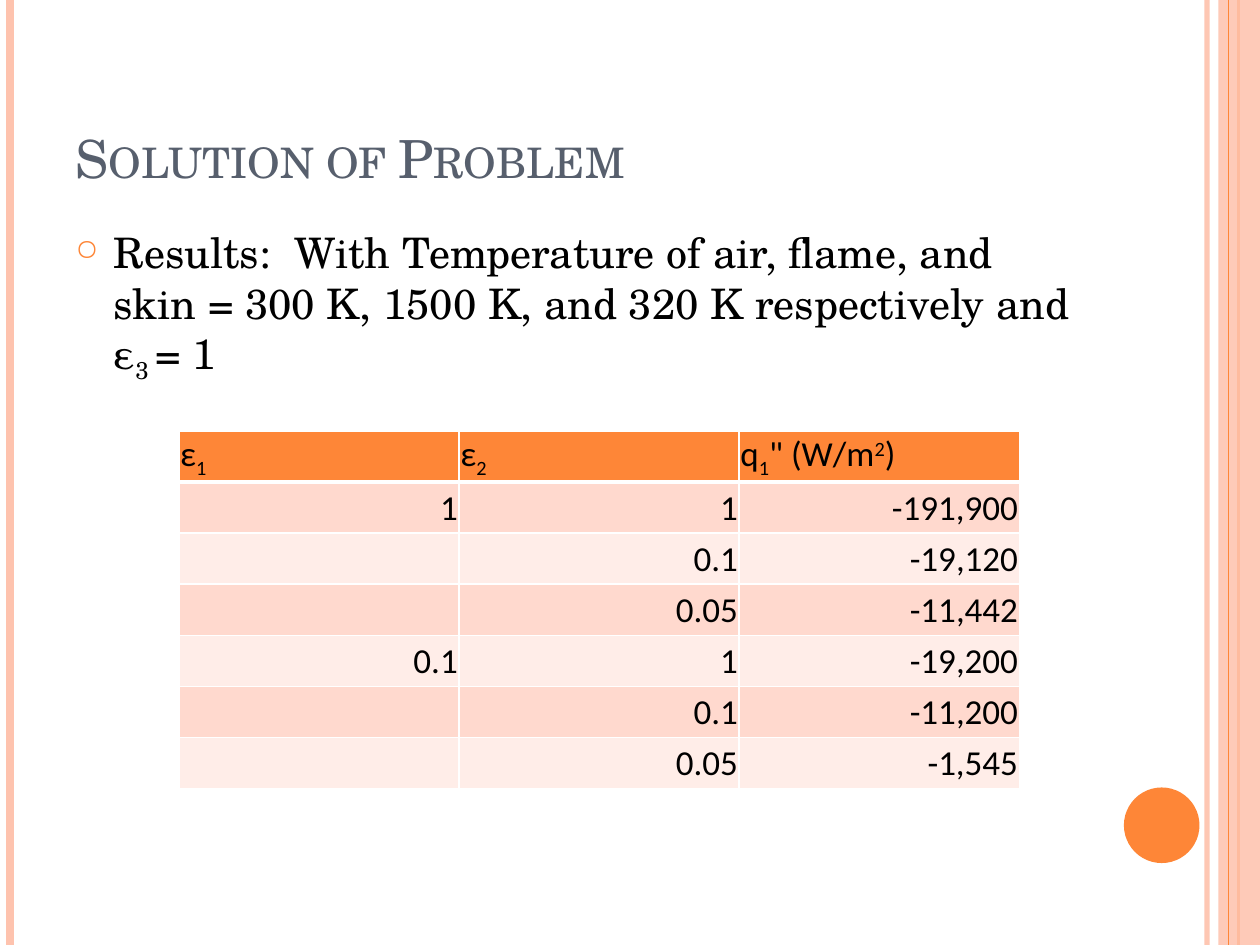
"""Build the slide showing radiative heat flux results for a flame problem."""
from typing import NamedTuple

from lxml import etree
from pptx import Presentation
from pptx import util as u
from pptx.dml.color import RGBColor
from pptx.enum import shapes, text
from pptx.oxml import ns

ORANGE, PEACH, WHITE, BLACK = "FE8637", "FEC3AE", "FFFFFF", "000000"
BANDS = "FFD9CE", "FFEDE8"
SERIF, SANS = "TeX Gyre Schola", "Calibri"


class Rule(NamedTuple):
    x: float
    color: str
    width: float
    alpha: int = 100


class Run(NamedTuple):
    text: str
    baseline: int = 0


BACK_RULES = [Rule(9.58, PEACH, 3, 93), Rule(0.08, PEACH, 4.5), Rule(9.83, ORANGE, 1.5)]
FRONT_RULE = Rule(9.75, ORANGE, 0.75)
BODY = [
    Run("Results:  With Temperature of air, flame, and skin = 300 K, 1500 K, and 320 K respectively and ε"),
    Run("3 ", -25),
    Run("= 1"),
]
HEADER = [
    [Run("ε"), Run("1", -25)],
    [Run("ε"), Run("2", -25)],
    [Run("q"), Run("1", -25), Run('" (W/m'), Run("2", 30), Run(")")],
]
RESULTS = [
    ("1", "1", "-191,900"),
    ("", "0.1", "-19,120"),
    ("", "0.05", "-11,442"),
    ("0.1", "1", "-19,200"),
    ("", "0.1", "-11,200"),
    ("", "0.05", "-1,545"),
]


def rgb(value: str) -> RGBColor:
    return RGBColor.from_string(value)


def sub(parent, tag: str, **attrs):
    return etree.SubElement(parent, ns.qn(tag), attrs)


def set_alpha(parent, percent: int) -> None:
    if percent < 100:
        color = next(parent.iter(ns.qn("a:srgbClr")))
        sub(color, "a:alpha", val=str(percent * 1000))


def add_rule(s, rule: Rule) -> None:
    x = u.Inches(rule.x)
    line = s.shapes.add_connector(shapes.MSO_CONNECTOR.STRAIGHT, x, 0, x, u.Inches(7.5))
    line.line.color.rgb = rgb(rule.color)
    line.line.width = u.Pt(rule.width)
    set_alpha(line._element.spPr, rule.alpha)
    sub(line._element.spPr, "a:effectLst")


def add_solid(s, kind, x: float, y: float, w: float, h: float, color: str, alpha: int = 100) -> None:
    sp = s.shapes.add_shape(kind, *map(u.Inches, (x, y, w, h)))
    sp.shadow.inherit = False
    sp.fill.solid()
    sp.fill.fore_color.rgb = rgb(color)
    sp.line.fill.background()
    set_alpha(sp._element.spPr, alpha)


def add_runs(p, runs: list[Run], font: str, size: float, color: str) -> None:
    for run in runs:
        r = p.add_run()
        r.text = run.text
        r.font.name, r.font.size = font, u.Pt(size)
        r.font.color.rgb = rgb(color)
        if run.baseline:
            r.font._element.set("baseline", str(run.baseline * 1000))


def add_title(s) -> None:
    sp = s.shapes.title
    sp.left, sp.top, sp.width, sp.height = map(u.Inches, (0.5, 0.3, 8.17, 1.25))
    tf = sp.text_frame
    tf.auto_size = text.MSO_AUTO_SIZE.NONE
    tf.vertical_anchor = text.MSO_ANCHOR.BOTTOM
    p = tf.paragraphs[0]
    p.alignment = text.PP_ALIGN.LEFT
    add_runs(p, [Run("Solution of Problem")], SERIF, 30, "575F6D")
    p.runs[0].font._element.set("cap", "small")


def add_body(s) -> None:
    tf = s.shapes.add_textbox(*map(u.Inches, (0.5, 1.75, 8.17, 5.33))).text_frame
    tf.word_wrap = True
    p = tf.paragraphs[0]
    p.space_before = u.Pt(6)
    add_runs(p, BODY, SERIF, 24, BLACK)
    pPr = p._p.get_or_add_pPr()
    pPr.set("marL", str(u.Inches(0.3)))
    pPr.set("indent", str(-u.Inches(0.3)))
    sub(sub(pPr, "a:buClr"), "a:srgbClr", val=ORANGE)
    sub(pPr, "a:buSzPct", val="70000")
    sub(pPr, "a:buChar", char="○")


def fill_cell(cell, runs: list[Run], fill: str, align, bottom: float) -> None:
    cell.margin_left = cell.margin_right = cell.margin_top = u.Inches(0.01)
    cell.margin_bottom = 0
    cell.vertical_anchor = text.MSO_ANCHOR.MIDDLE
    p = cell.text_frame.paragraphs[0]
    p.alignment = align
    add_runs(p, runs, SANS, 20, BLACK)
    tcPr = cell._tc.get_or_add_tcPr()
    for side, width in zip("LRTB", (1, 1, 1, bottom)):
        ln = sub(tcPr, f"a:ln{side}", w=str(u.Pt(width)))
        sub(sub(ln, "a:solidFill"), "a:srgbClr", val=WHITE)
    cell.fill.solid()
    cell.fill.fore_color.rgb = rgb(fill)


def add_results(s) -> None:
    rows = len(RESULTS) + 1
    frame = s.shapes.add_table(rows, 3, *map(u.Inches, (1.42, 3.42, 6.67, 2.84)))
    table = frame.table
    for row in table.rows:
        row.height = u.Inches(2.84 / rows)
    for c, runs in enumerate(HEADER):
        fill_cell(table.cell(0, c), runs, ORANGE, text.PP_ALIGN.LEFT, 3)
    for i, values in enumerate(RESULTS):
        for c, value in enumerate(values):
            runs = [Run(value)] if value else []
            fill_cell(table.cell(i + 1, c), runs, BANDS[i % 2], text.PP_ALIGN.RIGHT, 1)


def main() -> None:
    prs = Presentation()
    prs.slide_width, prs.slide_height = u.Inches(10), u.Inches(7.5)
    s = prs.slides.add_slide(prs.slide_layouts[5])
    for rule in BACK_RULES:
        add_rule(s, rule)
    add_solid(s, shapes.MSO_SHAPE.RECTANGLE, 9.67, 0, 0.33, 7.5, PEACH, 87)
    add_rule(s, FRONT_RULE)
    add_solid(s, shapes.MSO_SHAPE.OVAL, 8.92, 6.25, 0.6, 0.6, ORANGE)
    add_title(s)
    add_body(s)
    add_results(s)
    prs.save("out.pptx")


if __name__ == "__main__":
    main()
